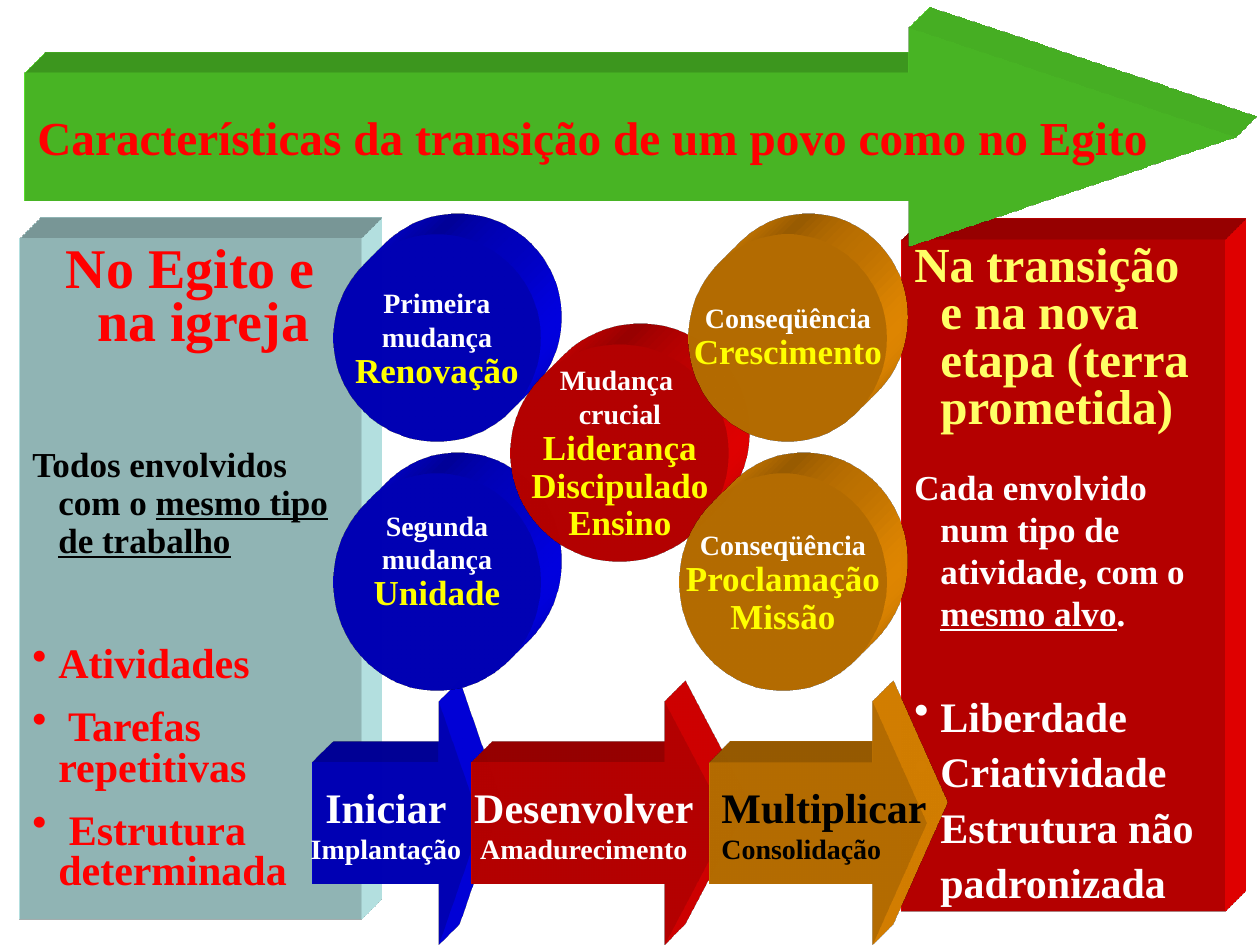
from lxml import etree
from pptx import Presentation
from pptx.dml.color import RGBColor
from pptx.enum.shapes import MSO_SHAPE as SHAPE
from pptx.enum.text import MSO_ANCHOR as ANCHOR, PP_ALIGN as ALIGN
from pptx.oxml import parse_xml
from pptx.oxml.ns import qn
from pptx.util import Pt

PX = 914400 / 126
NS = "http://schemas.openxmlformats.org/drawingml/2006/main"
BLUE, RED, ORANGE = "0000FF", "FF0000", "FF9900"
WHITE, BLACK, YELLOW = "FFFFFF", "000000", "FFFF00"


def add_block(kind, box, color, adjustments=()):
    sp = s.shapes.add_shape(kind, *[round(v * PX) for v in box])
    for i, value in enumerate(adjustments):
        sp.adjustments[i] = value
    sp.shadow.inherit = False
    sp.fill.solid()
    sp.fill.fore_color.rgb = RGBColor.from_string(color)
    sp.line.fill.background()
    props = sp.element.spPr
    props.append(parse_xml(
        f'<a:scene3d xmlns:a="{NS}"><a:camera prst="legacyObliqueTopRight"/>'
        '<a:lightRig rig="legacyFlat3" dir="b"/></a:scene3d>'))
    props.append(parse_xml(
        f'<a:sp3d xmlns:a="{NS}" extrusionH="430200" prstMaterial="legacyMatte">'
        f'<a:extrusionClr><a:srgbClr val="{color}"/></a:extrusionClr></a:sp3d>'))
    tf = sp.text_frame
    tf.word_wrap = kind == SHAPE.RECTANGLE
    tf.vertical_anchor = ANCHOR.TOP if tf.word_wrap else ANCHOR.MIDDLE
    return tf


def add_text(tf, text, size, color, align=ALIGN.LEFT, spacing=1.0, underlined=""):
    p = tf.paragraphs[0]
    if p.runs:
        p = tf.add_paragraph()
    p.text = text
    p.alignment = align
    p.line_spacing = spacing
    if underlined:
        before, after = text.split(underlined)
        p.text = before
        p.add_run().text = underlined
        p.runs[-1].font.underline = True
        if after:
            p.add_run().text = after
    for r in p.runs:
        r.font.name = "Times New Roman"
        r.font.size = Pt(size)
        r.font.bold = True
        r.font.color.rgb = RGBColor.from_string(color)
    return p


prs = Presentation()
prs.slide_width, prs.slide_height = round(1260 * PX), round(945 * PX)
s = prs.slides.add_slide(prs.slide_layouts[6])

panels = [
    ((20, 239, 341, 681), "CCFFFF", [
        ("No Egito e na igreja", 32, RED, 0.8, 0, "", False),
        ("Todos envolvidos com o mesmo tipo de trabalho", 20, BLACK, 0.9, 54,
         "mesmo tipo de trabalho", False),
        ("Atividades", 24, RED, 0.8, 49, "", True),
        (" Tarefas repetitivas", 24, RED, 0.8, 13, "", True),
        (" Estrutura determinada", 24, RED, 0.8, 13, "", True)]),
    ((902, 239, 323, 673), RED, [
        ("Na transição e na nova etapa (terra prometida)", 28, "FFFF66", 0.8, 0, "", False),
        ("Cada envolvido num tipo de atividade, com o mesmo alvo.", 20, WHITE, 1.0, 18,
         "mesmo alvo", False),
        ("Liberdade", 24, WHITE, 1.1, 30, "", True),
        ("Criatividade", 24, WHITE, 1.1, 0, "", True),
        ("Estrutura não padronizada", 24, WHITE, 1.1, 0, "", True)]),
]
for box, color, rows in panels:
    tf = add_block(SHAPE.RECTANGLE, box, color)
    for text, size, ink, spacing, gap, underlined, bullet in rows:
        align = ALIGN.CENTER if size == 32 else ALIGN.LEFT
        p = add_text(tf, text, size, ink, align, spacing, underlined)
        p.space_before = Pt(gap)
        pPr = p._p.get_or_add_pPr()
        pPr.set("marL", str(round(26 * PX)))
        pPr.set("indent", str(round(-26 * PX)))
        if bullet:
            etree.SubElement(pPr, qn("a:buChar")).set("char", "•")

tf = add_block(SHAPE.RIGHT_ARROW, (25, 27, 1211, 220), "66FF33", (0.585, 1.487))
add_text(tf, "Características da transição de um povo como no Egito", 27, RED)

steps = [
    (312, 169, BLUE, 0.25, WHITE, ALIGN.CENTER, "Iniciar", "Implantação"),
    (471, 258, RED, 0.264, WHITE, ALIGN.CENTER, "Desenvolver", "Amadurecimento"),
    (709, 218, ORANGE, 0.25, BLACK, ALIGN.LEFT, "Multiplicar", "Consolidação"),
]
for x, w, color, head, ink, align, title, detail in steps:
    tf = add_block(SHAPE.RIGHT_ARROW, (x, 701, w, 244), color, (0.5, head))
    add_text(tf, title, 24, ink, align)
    add_text(tf, detail, 16, ink, align)

circles = [
    ((333, 234, 208, 208), BLUE, 6, ["Primeira", "mudança"], ["Renovação"]),
    ((333, 473, 208, 218), BLUE, 49, ["Segunda", "mudança"], ["Unidade"]),
    ((511, 344, 218, 218), RED, 6, ["Mudança ", "crucial"],
     ["Liderança", "Discipulado", "Ensino"]),
    ((689, 234, 198, 208), ORANGE, 10, ["Conseqüência"], ["Crescimento"]),
    ((679, 473, 208, 218), ORANGE, 6, ["Conseqüência"], ["Proclamação", "Missão"]),
]
for box, color, inset, labels, topics in circles:
    tf = add_block(SHAPE.OVAL, box, color)
    tf.margin_bottom = round(inset * PX)
    for text in labels:
        add_text(tf, text, 16, WHITE, ALIGN.CENTER)
    for text in topics:
        add_text(tf, text, 20, YELLOW, ALIGN.CENTER, 0.9)

prs.save("out.pptx")
